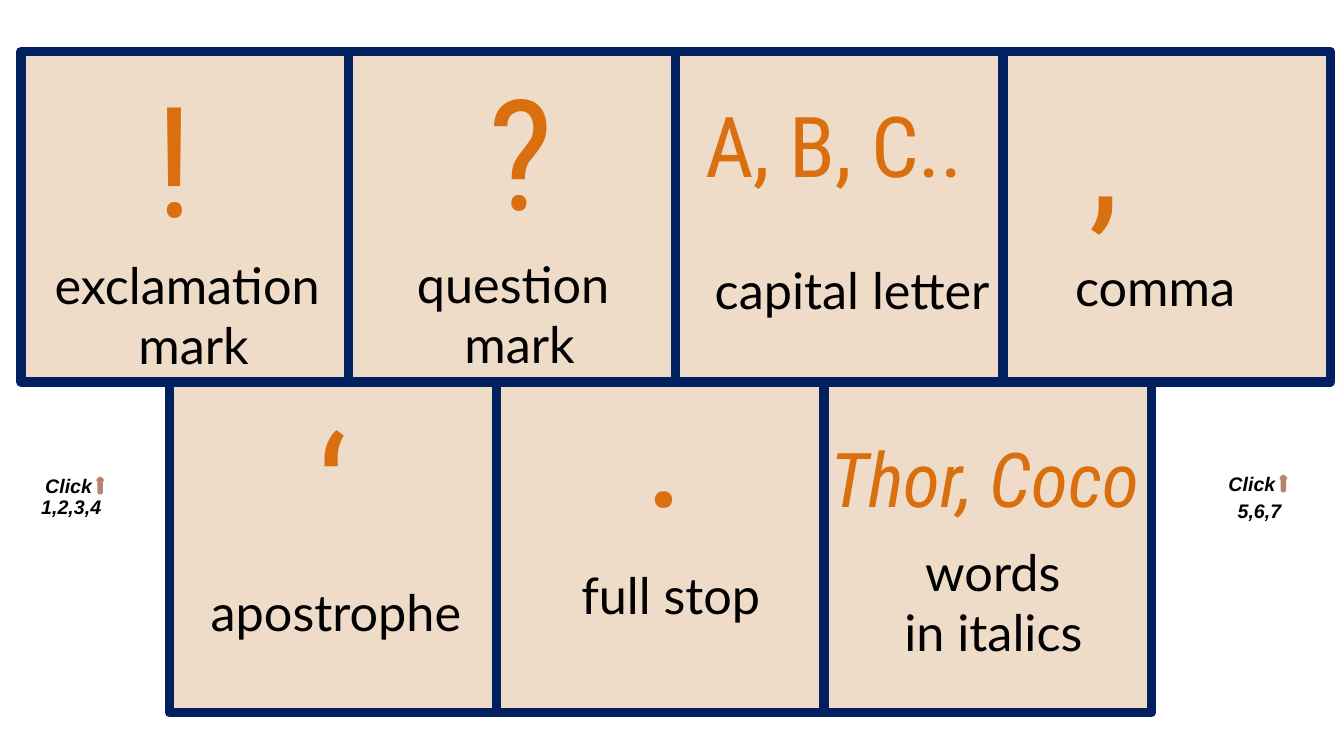
from dataclasses import dataclass

from pptx import Presentation
from pptx import util as u
from pptx.dml.color import RGBColor
from pptx.enum import shapes, text


@dataclass(frozen=True)
class Theme:
    panel: RGBColor = RGBColor.from_string("EEDBC8")
    border: RGBColor = RGBColor.from_string("002060")
    mark: RGBColor = RGBColor.from_string("D96F0F")
    label: RGBColor = RGBColor.from_string("000000")
    arrow: RGBColor = RGBColor.from_string("F4B392")
    arrow_line: RGBColor = RGBColor.from_string("B5846C")
    mark_size: int = 110
    letters_size: int = 60
    titles_size: int = 54
    label_size: int = 36
    hint_size: int = 14


theme = Theme()
presentation = Presentation()
presentation.slide_width = u.Cm(33.87)
presentation.slide_height = u.Cm(19.05)
slide = presentation.slides.add_slide(presentation.slide_layouts[6])


def add_text(words, left, top, width, height, *, font, size, color,
             bold=False, italic=False, wrap=True, align=text.PP_ALIGN.LEFT):
    shape = slide.shapes.add_textbox(u.Cm(left), u.Cm(top), u.Cm(width), u.Cm(height))
    frame = shape.text_frame
    frame.word_wrap = wrap
    frame.auto_size = text.MSO_AUTO_SIZE.SHAPE_TO_FIT_TEXT
    frame.text = words
    for paragraph in frame.paragraphs:
        paragraph.alignment = align
        for run in paragraph.runs:
            run.font.name = font
            run.font.size = u.Pt(size)
            run.font.color.rgb = color
            run.font.bold = bold
            run.font.italic = italic


def add_shape(kind, left, top, width, height, *, fill, line, weight):
    shape = slide.shapes.add_shape(kind, u.Cm(left), u.Cm(top), u.Cm(width), u.Cm(height))
    shape.shadow.inherit = False
    shape.fill.solid()
    shape.fill.fore_color.rgb = fill
    shape.line.color.rgb = line
    shape.line.width = u.Pt(weight)


panel_width, panel_height = 8.25, 8.33
panel_rows = [(0.53, 1.3, 4), (4.27, 9.63, 3)]
for row_left, row_top, count in panel_rows:
    for column in range(count):
        add_shape(shapes.MSO_SHAPE.RECTANGLE, row_left + column * panel_width, row_top,
                  panel_width, panel_height,
                  fill=theme.panel, line=theme.border, weight=6.75)

marks = [
    ("!", 3.68, 1.47),
    ("?", 12.07, 1.3),
    (",", 27.2, 1.37),
    ("‘", 7.75, 9.8),
    (".", 16, 8.79),
]
mark_format = {"font": "Roboto Condensed", "color": theme.mark}
for mark, left, top in marks:
    add_text(mark, left, top, 2.72, 4.95, size=theme.mark_size, **mark_format)
add_text("A, B, C..", 17.53, 2.24, 7.87, 2.82, size=theme.letters_size, **mark_format)
add_text("Thor, Coco", 20.68, 10.77, 9.86, 2.57,
         size=theme.titles_size, italic=True, **mark_format)

labels = [
    ("exclamation \nmark", 0.97, 6.27, 7.82, 3.33),
    ("question \nmark", 10.21, 6.25, 5.77, 3.33),
    (" capital letter", 17.25, 6.4, 8.13, 1.8),
    ("comma", 26.75, 6.32, 4.72, 1.8),
    (" apostrophe", 4.62, 14.53, 7.37, 1.8),
    (" full stop ", 13.97, 14.1, 5.87, 1.8),
    (" words \nin italics", 22.38, 13.51, 5.31, 3.33),
]
for label, left, top, width, height in labels:
    add_text(label, left, top, width, height, font="Lato", size=theme.label_size,
             color=theme.label, wrap=False, align=text.PP_ALIGN.CENTER)

hints = [
    (0.89, 11.81, "1,2,3,4", 0.79, 12.34),
    (30.71, 11.76, "5,6,7", 30.94, 12.45),
]
for click_left, click_top, numbers, numbers_left, numbers_top in hints:
    for words, left, top in [("Click", click_left, click_top),
                             (numbers, numbers_left, numbers_top)]:
        add_text(words, left, top, 2.36, 0.86, font="Arial", size=theme.hint_size,
                 color=theme.label, bold=True, italic=True)
    add_shape(shapes.MSO_SHAPE.UP_ARROW, click_left + 1.57, click_top + 0.23, 0.13, 0.38,
              fill=theme.arrow, line=theme.arrow_line, weight=2)

presentation.save("out.pptx")
